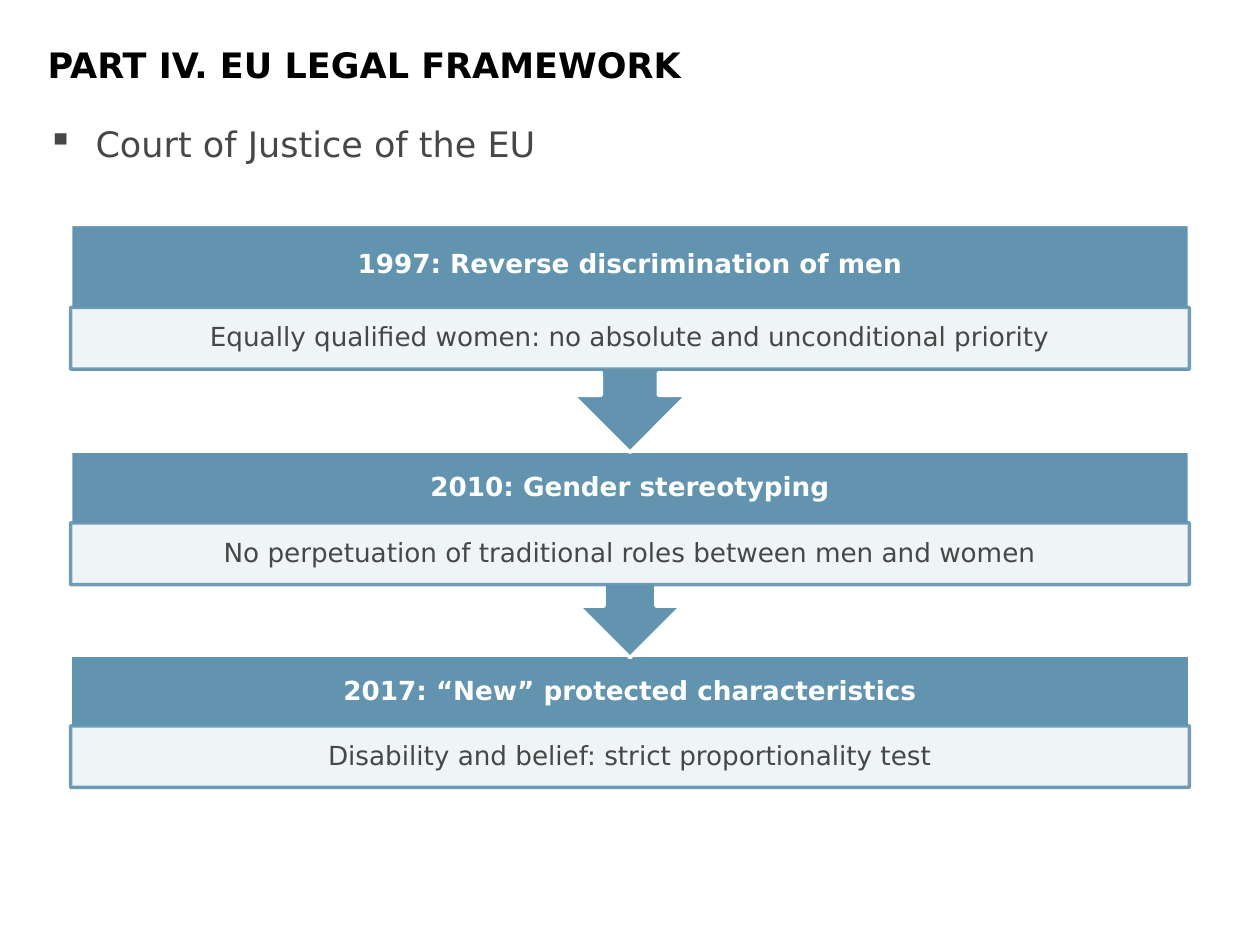
import dataclasses

import pptx
import pptx.dml.color
import pptx.enum.shapes
import pptx.enum.text
import pptx.oxml
import pptx.oxml.ns
import pptx.util
from lxml import etree

SHAPE = pptx.enum.shapes.MSO_SHAPE
ALIGN = pptx.enum.text.PP_ALIGN
ANCHOR = pptx.enum.text.MSO_ANCHOR


@dataclasses.dataclass(frozen=True)
class Theme:
    font: str = "DejaVu Sans"
    black: str = "000000"
    grey: str = "474746"
    white: str = "FFFFFF"
    blue: str = "6294B0"
    large: int = 20
    small: int = 15
    line: int = 2
    opacity: int = 90


class Deck:
    """Draws on a grid of 100 columns by 75 rows."""

    COLS, ROWS = 100, 75

    def __init__(self, theme):
        self.theme = theme
        self.prs = pptx.Presentation()
        self.prs.slide_width = pptx.util.Inches(10)
        self.prs.slide_height = pptx.util.Inches(7.5)
        self.s = self.prs.slides.add_slide(self.prs.slide_layouts[6])

    def place(self, x, y, w, h):
        col = self.prs.slide_width / self.COLS
        row = self.prs.slide_height / self.ROWS
        return [round(n) for n in (x * col, y * row, w * col, h * row)]

    def add_text(self, sp, text, size, color, bold=False, anchor=ANCHOR.MIDDLE):
        tf = sp.text_frame
        tf.word_wrap = True
        tf.vertical_anchor = anchor
        r = tf.paragraphs[0].add_run()
        r.text = text
        r.font.name = self.theme.font
        r.font.size = pptx.util.Pt(size)
        r.font.bold = bold
        r.font.color.rgb = pptx.dml.color.RGBColor.from_string(color)

    def centre(self, sp, inset):
        """Centre the text, with the given inset above and below it."""
        tf = sp.text_frame
        tf.margin_left = tf.margin_right = pptx.util.Inches(0.12)
        tf.margin_top = tf.margin_bottom = pptx.util.Inches(inset)
        tf.paragraphs[0].alignment = ALIGN.CENTER
        tf.paragraphs[0].line_spacing = 0.9

    def text_box(self, box, *args, **kwargs):
        sp = self.s.shapes.add_textbox(*self.place(*box))
        self.add_text(sp, *args, **kwargs)
        return sp

    def bullet(self, box, text):
        sp = self.text_box(box, text, self.theme.large, self.theme.grey, anchor=ANCHOR.TOP)
        pPr = sp.text_frame.paragraphs[0]._p.get_or_add_pPr()
        indent = pptx.util.Inches(0.38)
        pPr.set("marL", str(indent))
        pPr.set("indent", str(-indent))
        etree.SubElement(pPr, pptx.oxml.ns.qn("a:buChar"), char="▪")

    def shape(self, kind, box, fill, line, opacity=100):
        sp = self.s.shapes.add_shape(kind, *self.place(*box))
        sp.shadow.inherit = False
        sp.fill.solid()
        sp.fill.fore_color.rgb = pptx.dml.color.RGBColor.from_string(fill)
        sp.line.color.rgb = pptx.dml.color.RGBColor.from_string(line)
        sp.line.width = pptx.util.Pt(self.theme.line)
        if opacity < 100:
            for clr in sp._element.spPr.iter(pptx.oxml.ns.qn("a:srgbClr")):
                etree.SubElement(clr, pptx.oxml.ns.qn("a:alpha"), val=str(opacity * 1000))
        return sp

    def step(self, kind, rows, heading, detail):
        """Draw a band; rows are its top, height, heading height and detail offset."""
        t = self.theme
        left, width, detail_height = 5.6, 88.8, 4.9
        top, height, heading_height, offset = rows
        self.shape(kind, (left, top, width, height), t.blue, t.white)
        box = (left, top, width, heading_height)
        sp = self.text_box(box, heading, t.small, t.white, bold=True)
        self.centre(sp, 0.12)
        box = (left, top + offset, width, detail_height)
        sp = self.shape(SHAPE.RECTANGLE, box, t.white, t.blue, t.opacity)
        self.add_text(sp, detail, t.small, t.grey)
        self.centre(sp, 0.02)


STEPS = [
    (SHAPE.DOWN_ARROW_CALLOUT, (17.8, 18.1, 6.4, 6.6),
     "1997: Reverse discrimination of men",
     "Equally qualified women: no absolute and unconditional priority"),
    (SHAPE.DOWN_ARROW_CALLOUT, (35.8, 16.4, 5.8, 5.7),
     "2010: Gender stereotyping",
     "No perpetuation of traditional roles between men and women"),
    (SHAPE.RECTANGLE, (52, 10.7, 5.8, 5.6),
     "2017: “New” protected characteristics",
     "Disability and belief: strict proportionality test"),
]


def main():
    theme = Theme()
    deck = Deck(theme)
    deck.text_box((2.8, 2.1, 94.5, 6), "PART IV. EU LEGAL FRAMEWORK",
                  theme.large, theme.black, bold=True)
    deck.bullet((2.8, 9.2, 94.5, 55.1), "Court of Justice of the EU")
    # Last step first, so that each arrow tip lies over the band below it
    for step in reversed(STEPS):
        deck.step(*step)
    deck.prs.save("out.pptx")


if __name__ == "__main__":
    main()
